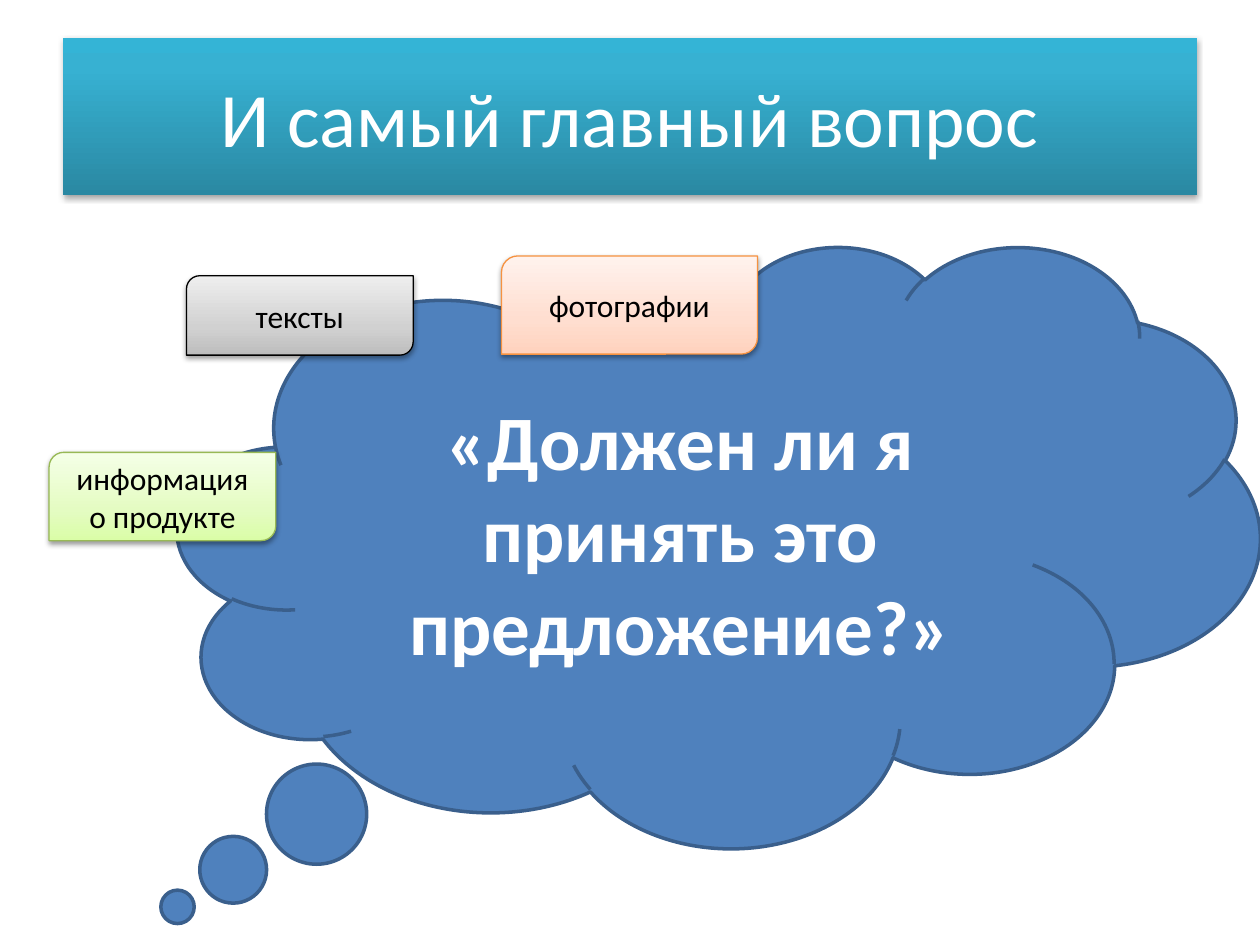
from lxml.etree import SubElement
from pptx import Presentation
from pptx.dml.color import RGBColor
from pptx.enum.shapes import MSO_SHAPE as Preset
from pptx.enum.text import MSO_ANCHOR as Anchor, PP_ALIGN as Align
from pptx.oxml.ns import qn
from pptx.util import Cm, Pt


def color(code):
    return RGBColor.from_string(code)


def write(shape, text, font="Calibri", size=18, ink="000000", bold=False):
    frame = shape.text_frame
    frame.word_wrap = True
    frame.vertical_anchor = Anchor.MIDDLE
    para = frame.paragraphs[0]
    para.alignment = Align.CENTER
    span = para.add_run()
    span.text = text
    span.font.name = font
    span.font.size = Pt(size)
    span.font.bold = bold
    span.font.color.rgb = color(ink)


class Board:
    """Holds the style and the current slide."""

    white = "FFFFFF"
    heading_size = 44

    def __init__(self, slide):
        self.slide = slide

    def shape(self, preset, box, line=None, width=0.75):
        shape = self.slide.shapes.add_shape(preset, *(Cm(n) for n in box))
        shape.shadow.inherit = False
        if line:
            shape.line.color.rgb = color(line)
            shape.line.width = Pt(width)
        else:
            shape.line.fill.background()
        return shape

    def gradient(self, shape, stops):
        shape.fill.gradient()
        shape.fill.gradient_angle = 90
        stop_list = shape._element.spPr.find(qn("a:gradFill")).find(qn("a:gsLst"))
        for stop in list(stop_list):
            stop_list.remove(stop)
        for position, code in stops:
            stop = SubElement(stop_list, qn("a:gs"), pos=str(position * 1000))
            SubElement(stop, qn("a:srgbClr"), val=code)

    def shadow(self, shape, distance, opacity):
        effects = shape._element.spPr.find(qn("a:effectLst"))
        outer = SubElement(effects, qn("a:outerShdw"), blurRad=str(Pt(3.1)),
                           dist=str(Pt(distance)), dir="5400000", rotWithShape="0")
        tint = SubElement(outer, qn("a:srgbClr"), val="000000")
        SubElement(tint, qn("a:alpha"), val=str(opacity * 1000))

    def title(self, text, box, stops):
        banner = self.shape(Preset.RECTANGLE, box)
        self.gradient(banner, stops)
        self.shadow(banner, distance=1.8, opacity=35)
        write(banner, text, size=self.heading_size, ink=self.white)

    def thought(self, text, box, tail, fill, line):
        cloud = self.shape(Preset.CLOUD_CALLOUT, box, line, width=2)
        cloud.adjustments[0], cloud.adjustments[1] = tail
        cloud.fill.solid()
        cloud.fill.fore_color.rgb = color(fill)
        write(cloud, text, size=self.heading_size, ink=self.white, bold=True)

    def tag(self, text, box, shades, line):
        tag = self.shape(Preset.ROUND_2_DIAG_RECTANGLE, box, line)
        self.gradient(tag, zip((0, 35, 100), shades))
        self.shadow(tag, distance=1.6, opacity=38)
        write(tag, text)


def main():
    deck = Presentation()
    deck.slide_width, deck.slide_height = Cm(25.4), Cm(19.05)
    board = Board(deck.slides.add_slide(deck.slide_layouts[6]))

    # Title banner
    board.title("И самый главный вопрос", (1.27, 0.76, 22.86, 3.18),
                [(0, "2A88A2"), (80, "37B1D2"), (100, "34B4D6")])

    # Main question
    board.thought("«Должен ли я принять это предложение?»",
                  (3.58, 4.95, 21.82, 12.12), tail=(-0.5, 0.6),
                  fill="4F81BD", line="3A5F8C")

    # Tags around the cloud
    tags = [
        ("тексты", (3.76, 5.56, 4.57, 1.6),
         ("BDBDBD", "D1D1D1", "EEEEEE"), "000000"),
        ("информация о продукте", (0.99, 9.12, 4.57, 1.78),
         ("DAFDA7", "E4FCC2", "F5FFE7"), "98B955"),
        ("фотографии", (10.11, 5.16, 5.16, 1.98),
         ("FFD2BD", "FFDED0", "FFF2ED"), "F69240"),
    ]
    for text, box, shades, line in tags:
        board.tag(text, box, shades, line)

    deck.save("out.pptx")


if __name__ == "__main__":
    main()
